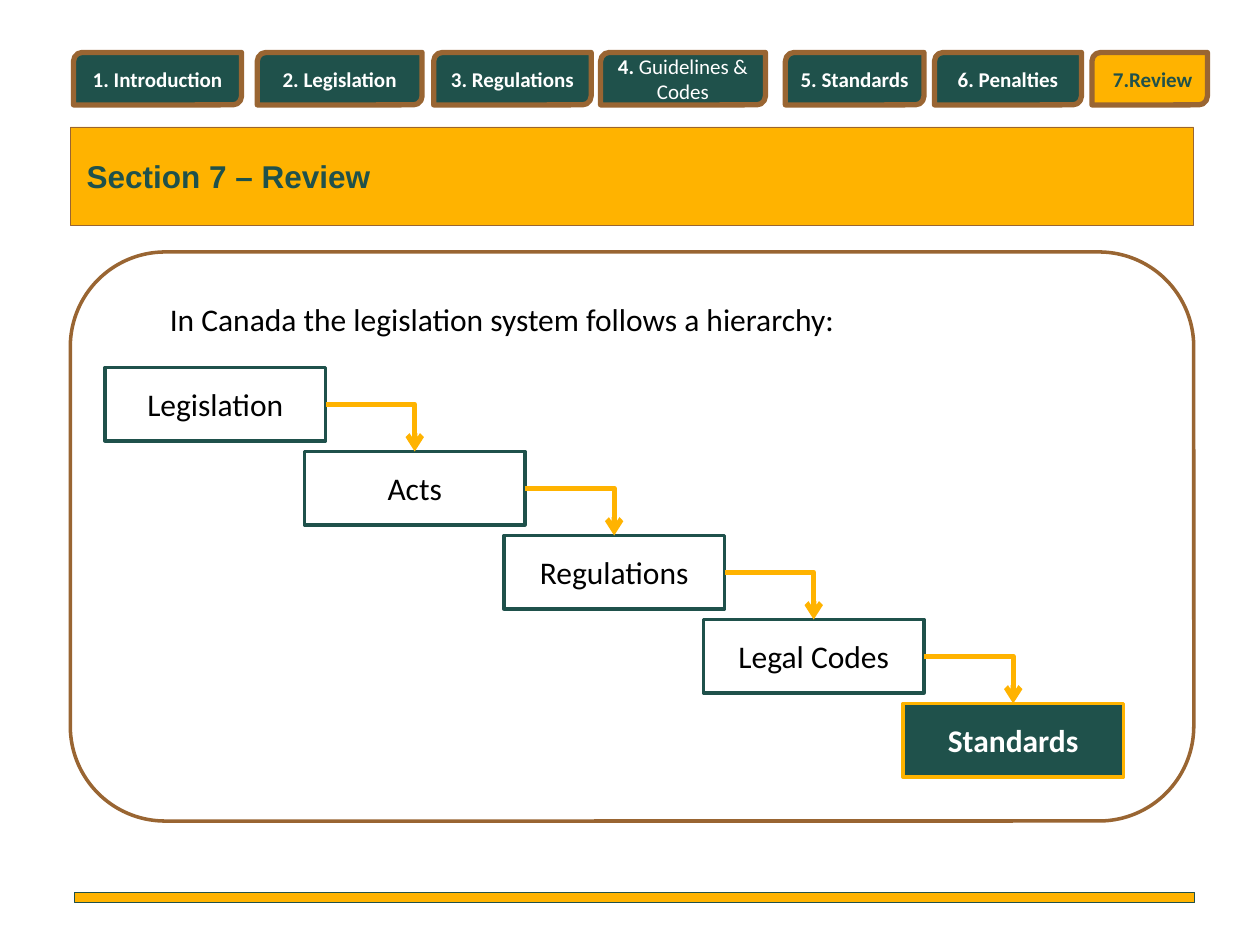
from lxml import etree
from pptx import Presentation
from pptx import util as u
from pptx.dml.color import RGBColor
from pptx.enum import shapes, text
from pptx.oxml.ns import qn

GREEN = RGBColor(0x1F, 0x51, 0x4B)
AMBER = RGBColor(0xFF, 0xB3, 0x00)
BROWN = RGBColor(0x99, 0x65, 0x32)
WHITE = RGBColor(0xFF, 0xFF, 0xFF)
BLACK = RGBColor(0x00, 0x00, 0x00)

COLUMNS, ROWS = 120, 90
TAB_TOP, TAB_HEIGHT = 5, 5
BOX_LEFT, BOX_TOP, BOX_WIDTH, BOX_HEIGHT = 10, 35, 21, 7
STEP_RIGHT, STEP_DOWN = 19, 8

TABS = [
    (7, 16, [("1. Introduction", True)]),
    (24.5, 15.7, [("2. Legislation", True)]),
    (41.3, 15, [("3. Regulations", True)]),
    (57.2, 15.7, [("4. ", True), ("Guidelines & Codes", False)]),
    (74.8, 13.2, [("5. Standards", True)]),
    (89, 14, [("6. Penalties", True)]),
    (104, 11, [("7.Review", True)]),
]
LEVELS = ["Legislation", "Acts", "Regulations", "Legal Codes", "Standards"]


class SlideBuilder:
    """Draws styled elements on one slide, placed by grid columns and rows."""

    def __init__(self, presentation):
        self.column = presentation.slide_width / COLUMNS
        self.row = presentation.slide_height / ROWS
        self.slide = presentation.slides.add_slide(presentation.slide_layouts[6])

    def place(self, left, top, width, height):
        return (round(left * self.column), round(top * self.row),
                round(width * self.column), round(height * self.row))

    def shape(self, kind, area, line, weight, fill=None):
        shape = self.slide.shapes.add_shape(kind, *self.place(*area))
        shape.shadow.inherit = False
        if fill is None:
            shape.fill.background()
        else:
            shape.fill.solid()
            shape.fill.fore_color.rgb = fill
        shape.line.color.rgb = line
        shape.line.width = u.Pt(weight)
        return shape

    def add_words(self, shape, pieces, color, size=18, font="Calibri",
                  align=text.PP_ALIGN.CENTER):
        frame = shape.text_frame
        frame.word_wrap = True
        frame.vertical_anchor = text.MSO_ANCHOR.MIDDLE
        paragraph = frame.paragraphs[0]
        paragraph.alignment = align
        for words, bold in pieces:
            run = paragraph.add_run()
            run.text = words
            run.font.name = font
            run.font.size = u.Pt(size)
            run.font.bold = bold
            run.font.color.rgb = color

    def label(self, area, words):
        box = self.slide.shapes.add_textbox(*self.place(*area))
        self.add_words(box, [(words, False)], BLACK, align=text.PP_ALIGN.LEFT)

    def arrow(self, start, end):
        connector = self.slide.shapes.add_connector(
            shapes.MSO_CONNECTOR.ELBOW, 0, 0, 0, 0)
        connector.begin_connect(start, 3)
        connector.end_connect(end, 0)
        connector.line.color.rgb = AMBER
        connector.line.width = u.Pt(3)
        properties = connector._element.spPr
        properties.find(qn("a:prstGeom")).set("prst", "bentConnector2")
        etree.SubElement(properties.find(qn("a:ln")), qn("a:tailEnd"), type="arrow")
        etree.SubElement(properties, qn("a:effectLst"))

    def tab(self, left, width, pieces, current):
        shape = self.shape(shapes.MSO_SHAPE.ROUND_2_DIAG_RECTANGLE,
                           (left, TAB_TOP, width, TAB_HEIGHT), BROWN, 3,
                           AMBER if current else GREEN)
        align = text.PP_ALIGN.RIGHT if current else text.PP_ALIGN.CENTER
        self.add_words(shape, pieces, GREEN if current else WHITE, 12, align=align)

    def level(self, index, words, final):
        area = (BOX_LEFT + index * STEP_RIGHT, BOX_TOP + index * STEP_DOWN,
                BOX_WIDTH, BOX_HEIGHT)
        box = self.shape(shapes.MSO_SHAPE.RECTANGLE, area,
                         AMBER if final else GREEN, 2, GREEN if final else None)
        self.add_words(box, [(words, final)], WHITE if final else BLACK)
        return box

    def title(self, area, words):
        band = self.shape(shapes.MSO_SHAPE.RECTANGLE, area, BROWN, 0.5, AMBER)
        band.text_frame.margin_left = u.Inches(0.13)
        self.add_words(band, [(words, True)], GREEN, font="Arial",
                       align=text.PP_ALIGN.LEFT)


def main():
    presentation = Presentation()
    presentation.slide_width = u.Inches(10)
    presentation.slide_height = u.Inches(7.5)
    builder = SlideBuilder(presentation)

    builder.shape(shapes.MSO_SHAPE.ROUNDED_RECTANGLE, (6.7, 24, 107, 54.2), BROWN, 2)
    builder.shape(shapes.MSO_SHAPE.RECTANGLE, (7.1, 85, 106.7, 1), GREEN, 0.5, AMBER)

    boxes = [builder.level(index, words, words == LEVELS[-1])
             for index, words in enumerate(LEVELS)]
    for start, end in zip(boxes, boxes[1:]):
        builder.arrow(start, end)

    builder.label((15, 28, 85, 4.8),
                  "In Canada the legislation system follows a hierarchy:")
    builder.title((6.7, 12.1, 107, 9.4), "Section 7 – Review")
    for left, width, pieces in TABS:
        builder.tab(left, width, pieces, left == TABS[-1][0])

    presentation.save("out.pptx")


if __name__ == "__main__":
    main()
